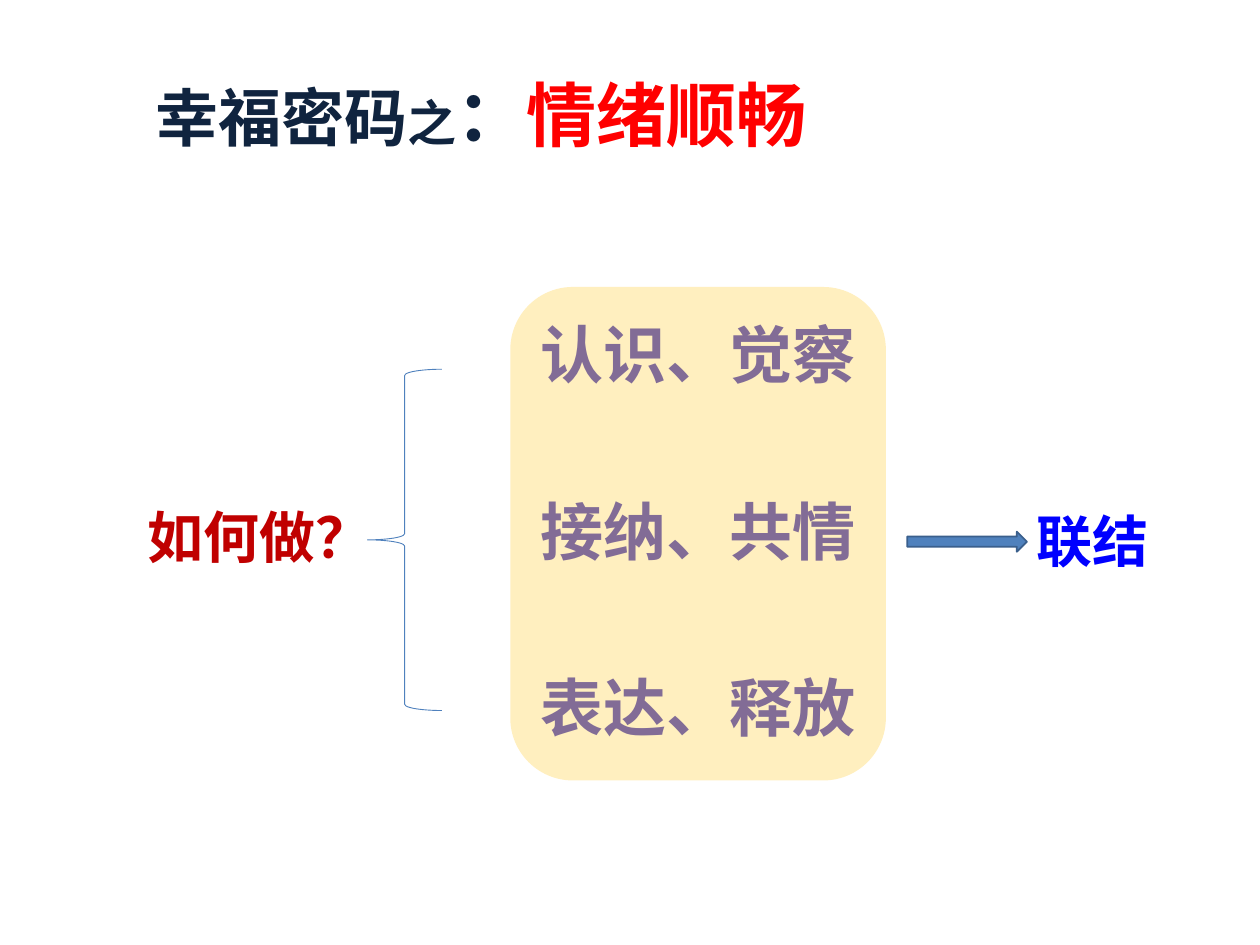
from dataclasses import dataclass

from lxml import etree
from pptx import Presentation
from pptx.dml.color import RGBColor
from pptx.enum.shapes import MSO_SHAPE
from pptx.enum.text import PP_ALIGN
from pptx.oxml.ns import qn
from pptx.util import Pt

LEFT, CENTER = PP_ALIGN.LEFT, PP_ALIGN.CENTER
ROUNDED = MSO_SHAPE.ROUNDED_RECTANGLE
BRACE = MSO_SHAPE.LEFT_BRACE
ARROW = MSO_SHAPE.RIGHT_ARROW
FONT = "Noto Sans CJK SC"
COLORS = {
    "navy": "10243F",
    "red": "FF0000",
    "indigo": "1307B3",
    "crimson": "C00000",
    "blue": "0000FF",
    "cream": "FFDE77",
    "steel": "4F81BD",
    "steel_dark": "3A5F8C",
}


@dataclass
class Span:
    text: str
    size: float
    color: str


@dataclass
class TextBlock:
    frame: tuple[float, float, float, float]
    paragraphs: list[list[Span]]
    align: PP_ALIGN = LEFT
    gap: float = 0


@dataclass
class Figure:
    kind: MSO_SHAPE
    frame: tuple[float, float, float, float]
    fill: str | None = None
    opacity: int = 100
    line: str | None = None
    line_width: float = 0


def rgb(name: str) -> RGBColor:
    return RGBColor.from_string(COLORS[name])


def draw_text(page, block: TextBlock) -> None:
    box = page.shapes.add_textbox(*map(Pt, block.frame))
    box.text_frame.word_wrap = True
    for index, spans in enumerate(block.paragraphs):
        para = box.text_frame.add_paragraph() if index else box.text_frame.paragraphs[0]
        para.alignment = block.align
        para.space_before = Pt(block.gap if index else 0)
        for span in spans:
            run = para.add_run()
            run.text = span.text
            formats = {"name": FONT, "size": Pt(span.size), "bold": True}
            for key, value in formats.items():
                setattr(run.font, key, value)
            run.font.color.rgb = rgb(span.color)
            east_asian = etree.SubElement(run._r.get_or_add_rPr(), qn("a:ea"))
            east_asian.set("typeface", FONT)


def draw_figure(page, figure: Figure) -> None:
    shape = page.shapes.add_shape(figure.kind, *map(Pt, figure.frame))
    shape.shadow.inherit = False
    if figure.fill:
        shape.fill.solid()
        shape.fill.fore_color.rgb = rgb(figure.fill)
        if figure.opacity < 100:
            color = shape._element.spPr.find(qn("a:solidFill"))[0]
            etree.SubElement(color, qn("a:alpha")).set("val", str(figure.opacity * 1000))
    else:
        shape.fill.background()
    if figure.line:
        shape.line.color.rgb = rgb(figure.line)
        shape.line.width = Pt(figure.line_width)
    else:
        shape.line.fill.background()


TITLE = [
    Span("幸福密码", 36, "navy"),
    Span("之", 28, "navy"),
    Span("：", 40, "navy"),
    Span("情绪顺畅", 40, "red"),
]
STEPS = ["认识、觉察", "接纳、共情", "表达、释放"]

ITEMS = [
    TextBlock((82, 37.5, 595.5, 55.5), [TITLE]),
    TextBlock(
        (268.5, 177, 260.5, 342.5),
        [[Span(step, 36, "indigo")] for step in STEPS],
        align=CENTER,
        gap=57.6,
    ),
    Figure(ROUNDED, (291.6, 164, 214.6, 282), fill="cream", opacity=47),
    TextBlock((77, 283.7, 386, 46), [[Span("如何做？", 32, "crimson")]]),
    Figure(BRACE, (210, 211, 42.5, 195), line="steel", line_width=0.5),
    TextBlock((585.4, 285.8, 113.8, 46), [[Span("联结", 32, "blue")]]),
    Figure(ARROW, (518.4, 303.8, 68.4, 11.5), fill="steel", line="steel_dark", line_width=1),
]


def main() -> None:
    deck = Presentation()
    deck.slide_width, deck.slide_height = Pt(720), Pt(540)
    page = deck.slides.add_slide(deck.slide_layouts[6])
    for item in ITEMS:
        if isinstance(item, TextBlock):
            draw_text(page, item)
        else:
            draw_figure(page, item)
    deck.save("out.pptx")


if __name__ == "__main__":
    main()
